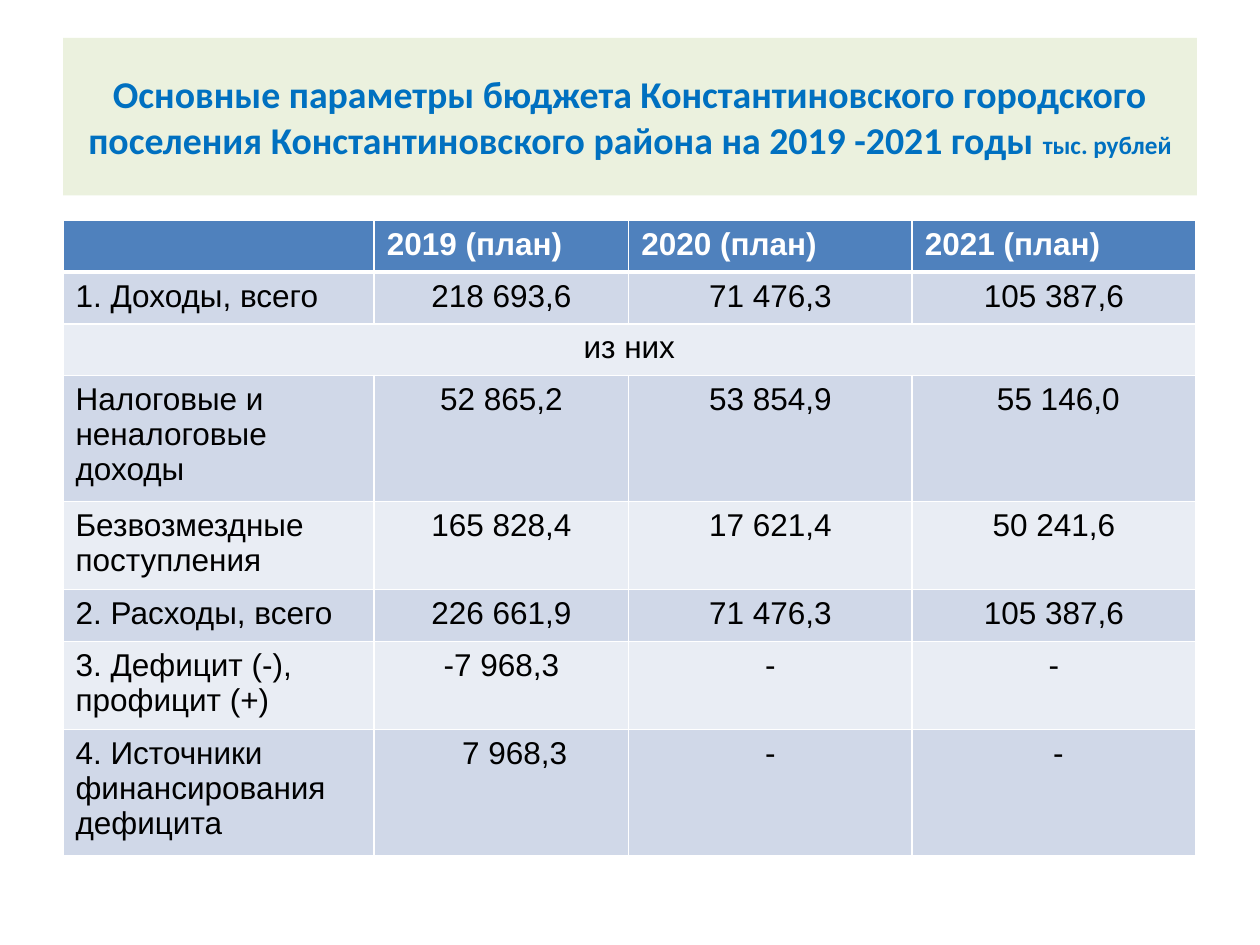
from lxml import etree
from pptx import Presentation
from pptx import util as u
from pptx.dml.color import RGBColor
from pptx.enum import text
from pptx.oxml import ns

COLORS = {
    "title_fill": "EBF1DE",
    "title": "0070C0",
    "header": "4F81BD",
    "odd": "D0D8E8",
    "even": "E9EDF4",
    "border": "FFFFFF",
    "header_text": "FFFFFF",
    "body_text": "000000",
}
COLUMN_WIDTHS = [2.47, 2.02, 2.25, 2.25]
ROW_HEIGHTS = [0.41, 0.41, 0.41, 1, 0.7, 0.41, 0.7, 1]
BUDGET = [
    ["", "2019 (план)", "2020 (план)", "2021 (план)"],
    ["1. Доходы, всего", "218 693,6", "71 476,3", "105 387,6"],
    ["из них"],
    ["Налоговые и неналоговые доходы", "52 865,2", "53 854,9", "55 146,0"],
    ["Безвозмездные поступления", "165 828,4", "17 621,4", "50 241,6"],
    ["2. Расходы, всего", "226 661,9", "71 476,3", "105 387,6"],
    ["3. Дефицит (-), профицит (+)", "-7 968,3", "-", "-"],
    ["4. Источники финансирования дефицита", "7 968,3", "-", "-"],
]
LEFT_MARGINS = {(3, 3): 0.17, (7, 1): 0.31, (7, 3): 0.17}


class SlideBuilder:
    def __init__(self, slide, colors):
        self.slide = slide
        self.colors = colors

    def color(self, name):
        return RGBColor.from_string(self.colors[name])

    def format_font(self, font, color, **values):
        for name, value in values.items():
            setattr(font, name, value)
        font.color.rgb = self.color(color)

    def fill(self, target, color):
        target.fill.solid()
        target.fill.fore_color.rgb = self.color(color)

    def title(self, box, runs):
        shape = self.slide.shapes.title
        for name, value in zip(("left", "top", "width", "height"), box):
            setattr(shape, name, u.Inches(value))
        self.fill(shape, "title_fill")
        frame = shape.text_frame
        frame.word_wrap = True
        frame.auto_size = text.MSO_AUTO_SIZE.NONE
        frame.vertical_anchor = text.MSO_ANCHOR.MIDDLE
        paragraph = frame.paragraphs[0]
        paragraph.alignment = text.PP_ALIGN.CENTER
        for content, size in runs:
            run = paragraph.add_run()
            run.text = content
            self.format_font(run.font, "title", name="Calibri", size=u.Pt(size), bold=True)

    def borders(self, cell, row):
        properties = cell._tc.get_or_add_tcPr()
        widths = {"lnL": 1, "lnR": 1, "lnT": 3 if row == 1 else 1, "lnB": 3 if row == 0 else 1}
        for tag, width in widths.items():
            line = etree.SubElement(properties, ns.qn(f"a:{tag}"), w=str(u.Pt(width)))
            solid = etree.SubElement(line, ns.qn("a:solidFill"))
            etree.SubElement(solid, ns.qn("a:srgbClr"), val=self.colors["border"])

    def cell(self, cell, row, content, centered, left_margin):
        self.borders(cell, row)
        self.fill(cell, "header" if row == 0 else "odd" if row % 2 else "even")
        cell.margin_left = u.Inches(left_margin)
        paragraph = cell.text_frame.paragraphs[0]
        paragraph.text = content
        paragraph.alignment = text.PP_ALIGN.CENTER if centered else text.PP_ALIGN.LEFT
        color = "header_text" if row == 0 else "body_text"
        self.format_font(paragraph.font, color, name="Arial", size=u.Pt(18), bold=row == 0)

    def table(self, left, top, column_widths, row_heights, rows, left_margins):
        table = self.slide.shapes.add_table(
            len(row_heights), len(column_widths), u.Inches(left), u.Inches(top),
            u.Inches(sum(column_widths)), u.Inches(sum(row_heights)),
        ).table
        for column, width in zip(table.columns, column_widths):
            column.width = u.Inches(width)
        for table_row, height in zip(table.rows, row_heights):
            table_row.height = u.Inches(height)
        for row, contents in enumerate(rows):
            spanning = len(contents) == 1
            if spanning:
                table.cell(row, 0).merge(table.cell(row, len(column_widths) - 1))
            for column, content in enumerate(contents):
                centered = spanning or (row > 0 and column > 0)
                margin = left_margins.get((row, column), 0.1)
                self.cell(table.cell(row, column), row, content, centered, margin)


def main():
    presentation = Presentation()
    presentation.slide_width = u.Inches(10)
    presentation.slide_height = u.Inches(7.5)
    slide = presentation.slides.add_slide(presentation.slide_layouts[5])
    builder = SlideBuilder(slide, COLORS)
    builder.title((0.5, 0.3, 9, 1.25), [
        ("Основные параметры бюджета Константиновского городского поселения "
         "Константиновского района на 2019 -2021 годы ", 21.6),
        ("тыс. рублей", 14.4),
    ])
    builder.table(0.5, 1.75, COLUMN_WIDTHS, ROW_HEIGHTS, BUDGET, LEFT_MARGINS)
    presentation.save("out.pptx")


if __name__ == "__main__":
    main()
